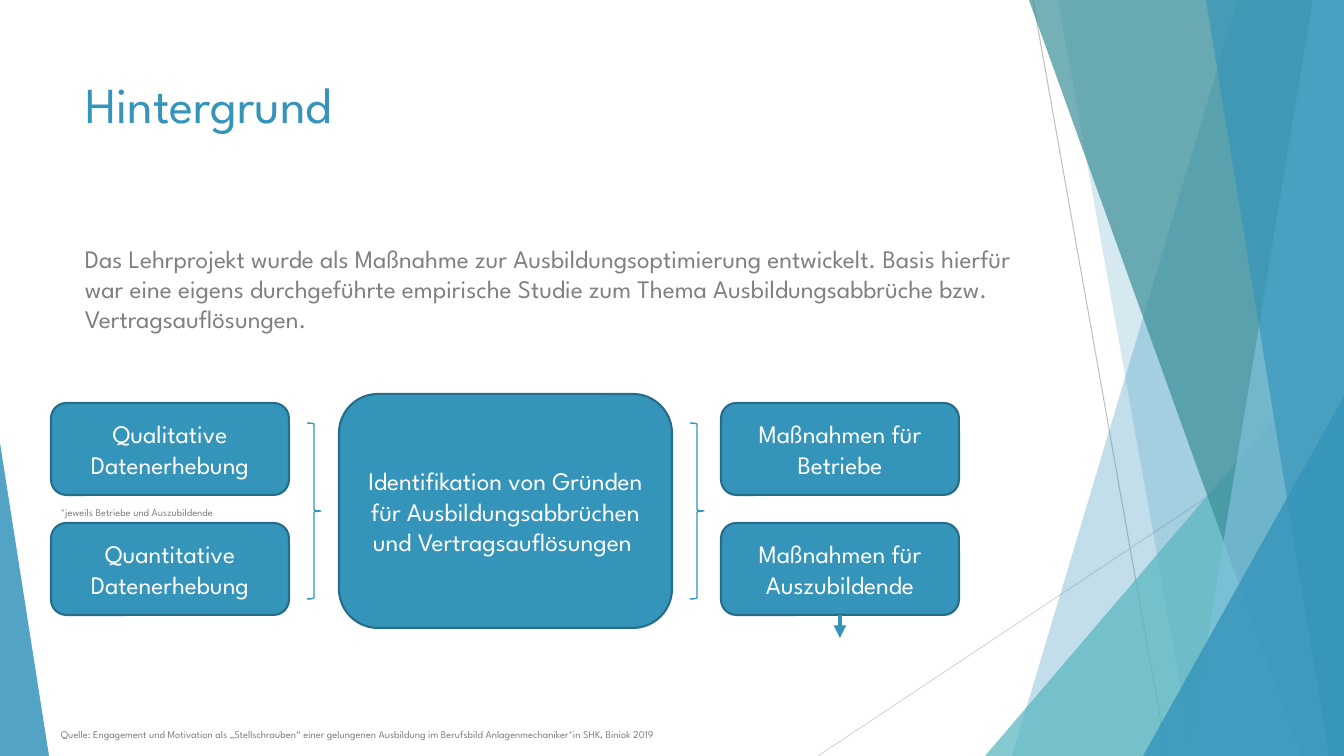
from dataclasses import dataclass

from lxml import etree
from pptx import Presentation
from pptx.dml.color import RGBColor
from pptx.enum.shapes import MSO_CONNECTOR, MSO_SHAPE
from pptx.enum.text import MSO_ANCHOR, MSO_AUTO_SIZE, PP_ALIGN
from pptx.oxml.ns import qn
from pptx.util import Pt

ROUNDED = MSO_SHAPE.ROUNDED_RECTANGLE
BRACE = MSO_SHAPE.RIGHT_BRACE
TRIANGLE = MSO_SHAPE.ISOSCELES_TRIANGLE
STRAIGHT = MSO_CONNECTOR.STRAIGHT
TOP, MIDDLE = MSO_ANCHOR.TOP, MSO_ANCHOR.MIDDLE
LEFT, CENTER = PP_ALIGN.LEFT, PP_ALIGN.CENTER
NO_AUTOFIT = MSO_AUTO_SIZE.NONE


@dataclass(frozen=True)
class Theme:
    font: str = "League Spartan"
    blue: str = "3494BA"
    outline: str = "266D8A"
    turquoise: str = "58B6C0"
    petrol: str = "3A8F98"
    sky: str = "7FC1DB"
    gray: str = "808080"
    white: str = "FFFFFF"
    hairline_dark: str = "BFBFBF"
    hairline_light: str = "D9D9D9"
    title_size: float = 36
    text_size: float = 18
    note_size: float = 7.4


THEME = Theme()
EMU_PER_PX = 914400 / 100.8
PAGE_WIDTH, PAGE_HEIGHT = 1344, 756

TITLE = "Hintergrund"
TITLE_BOX = (75, 68, 948, 145)
TEXTS = [  # text, box, size
    ("Das Lehrprojekt wurde als Maßnahme zur Ausbildungsoptimierung entwickelt. "
     "Basis hierfür war eine eigens durchgeführte empirische Studie zum Thema "
     "Ausbildungsabbrüche bzw. Vertragsauflösungen.",
     (75, 238, 975, 140), THEME.text_size),
    ("*jeweils Betriebe und Auszubildende", (51, 501, 224, 21), THEME.note_size),
    ("Quelle: Engagement und Motivation als „Stellschrauben“ einer gelungenen "
     "Ausbildung im Berufsbild Anlagenmechaniker*in SHK, Biniok 2019",
     (51, 723, 767, 24), THEME.note_size),
]

CARD_COLUMNS = [  # left edge, cards from top to bottom
    (51, ["Qualitative Datenerhebung", "Quantitative Datenerhebung"]),
    (721, ["Maßnahmen für Betriebe", "Maßnahmen für Auszubildende"]),
]
CARD_TOP, CARD_STEP, CARD_WIDTH, CARD_HEIGHT = 403, 120, 238, 92
CORE = "Identifikation von Gründen für Ausbildungsabbrüchen und Vertragsauflösungen "
CORE_BOX = (339, 394, 333, 234)
BRACE_LEFTS = [307, 690]
BRACE_TOP, BRACE_WIDTH, BRACE_HEIGHT = 423, 14, 176
ARROW_LENGTH = 23

HAIRLINES = [
    ((1033, 0), (1167, 756), THEME.hairline_dark),
    ((1344, 406), (818, 756), THEME.hairline_light),
]
# Bands reach the right page edge: (left at top, left at bottom), colour, opacity.
# Triangles stand on the bottom edge: (left, top, width, peak), colour, opacity.
FACETS = [
    ((1238, 1012), THEME.blue, 30),
    ((1058, 1193), THEME.blue, 20),
    ((985, 336, 359, 1), THEME.turquoise, 72),
    ((1029, 1301), THEME.petrol, 70),
    ((1313, 1188), THEME.sky, 70),
    ((1206, 1329), THEME.blue, 65),
    ((1143, 396, 201, 1), THEME.blue, 80),
    ((0, 443, 49, 0), THEME.blue, 85),
]


def px(*lengths):
    return [round(length * EMU_PER_PX) for length in lengths]


def rgb(color):
    return RGBColor.from_string(color)


def write(shape, text, size, color, align=LEFT, anchor=TOP):
    frame = shape.text_frame
    frame.word_wrap = True
    frame.auto_size = NO_AUTOFIT
    frame.vertical_anchor = anchor
    para = frame.paragraphs[0]
    para.alignment = align
    span = para.add_run()
    span.text = text
    span.font.name = THEME.font
    span.font.size = Pt(size)
    span.font.color.rgb = rgb(color)


def paint(shape, color, opacity=100):
    shape.shadow.inherit = False
    shape.fill.solid()
    shape.fill.fore_color.rgb = rgb(color)
    if opacity < 100:
        tint = shape.fill._xPr.find(".//" + qn("a:srgbClr"))
        etree.SubElement(tint, qn("a:alpha"), val=str(opacity * 1000))


def outline(shape, color, width):
    shape.line.color.rgb = rgb(color)
    shape.line.width = Pt(width)


def add_line(page, start, end, color, width, arrow=False):
    line = page.shapes.add_connector(STRAIGHT, *px(*start, *end))
    outline(line, color, width)
    if arrow:
        etree.SubElement(line.line._get_or_add_ln(), qn("a:tailEnd"), type="triangle")
    etree.SubElement(line._element.spPr, qn("a:effectLst"))


def add_facet(page, geometry, color, opacity):
    if len(geometry) == 2:
        top_left, bottom_left = geometry
        builder = page.shapes.build_freeform(top_left, 0, EMU_PER_PX)
        builder.add_line_segments([(PAGE_WIDTH, 0), (PAGE_WIDTH, PAGE_HEIGHT),
                                   (bottom_left, PAGE_HEIGHT)])
        facet = builder.convert_to_shape()
    else:
        left, top, width, peak = geometry
        facet = page.shapes.add_shape(TRIANGLE, *px(left, top, width, PAGE_HEIGHT - top))
        facet.adjustments[0] = peak
    paint(facet, color, opacity)
    facet.line.fill.background()


def add_card(page, text, box):
    card = page.shapes.add_shape(ROUNDED, *px(*box))
    paint(card, THEME.blue)
    outline(card, THEME.outline, 1.5)
    write(card, text, THEME.text_size, THEME.white, CENTER, MIDDLE)


def add_brace(page, left):
    brace = page.shapes.add_shape(BRACE, *px(left, BRACE_TOP, BRACE_WIDTH, BRACE_HEIGHT))
    brace.shadow.inherit = False
    brace.fill.background()
    outline(brace, THEME.blue, 1)


def main():
    deck = Presentation()
    deck.slide_width, deck.slide_height = px(PAGE_WIDTH, PAGE_HEIGHT)
    page = deck.slides.add_slide(deck.slide_layouts.get_by_name("Title Only"))

    for start, end, color in HAIRLINES:
        add_line(page, start, end, color, 0.75)
    for facet in FACETS:
        add_facet(page, *facet)

    title = page.shapes.title
    title.left, title.top, title.width, title.height = px(*TITLE_BOX)
    write(title, TITLE, THEME.title_size, THEME.blue)
    for text, box, size in TEXTS:
        write(page.shapes.add_textbox(*px(*box)), text, size, THEME.gray)

    for left, cards in CARD_COLUMNS:
        for row, text in enumerate(cards):
            top = CARD_TOP + row * CARD_STEP
            add_card(page, text, (left, top, CARD_WIDTH, CARD_HEIGHT))
    add_card(page, CORE, CORE_BOX)
    for left in BRACE_LEFTS:
        add_brace(page, left)

    arrow_x = CARD_COLUMNS[-1][0] + CARD_WIDTH // 2
    arrow_y = CARD_TOP + CARD_STEP + CARD_HEIGHT
    add_line(page, (arrow_x, arrow_y), (arrow_x, arrow_y + ARROW_LENGTH),
             THEME.blue, 3, arrow=True)

    deck.save("out.pptx")


if __name__ == "__main__":
    main()
